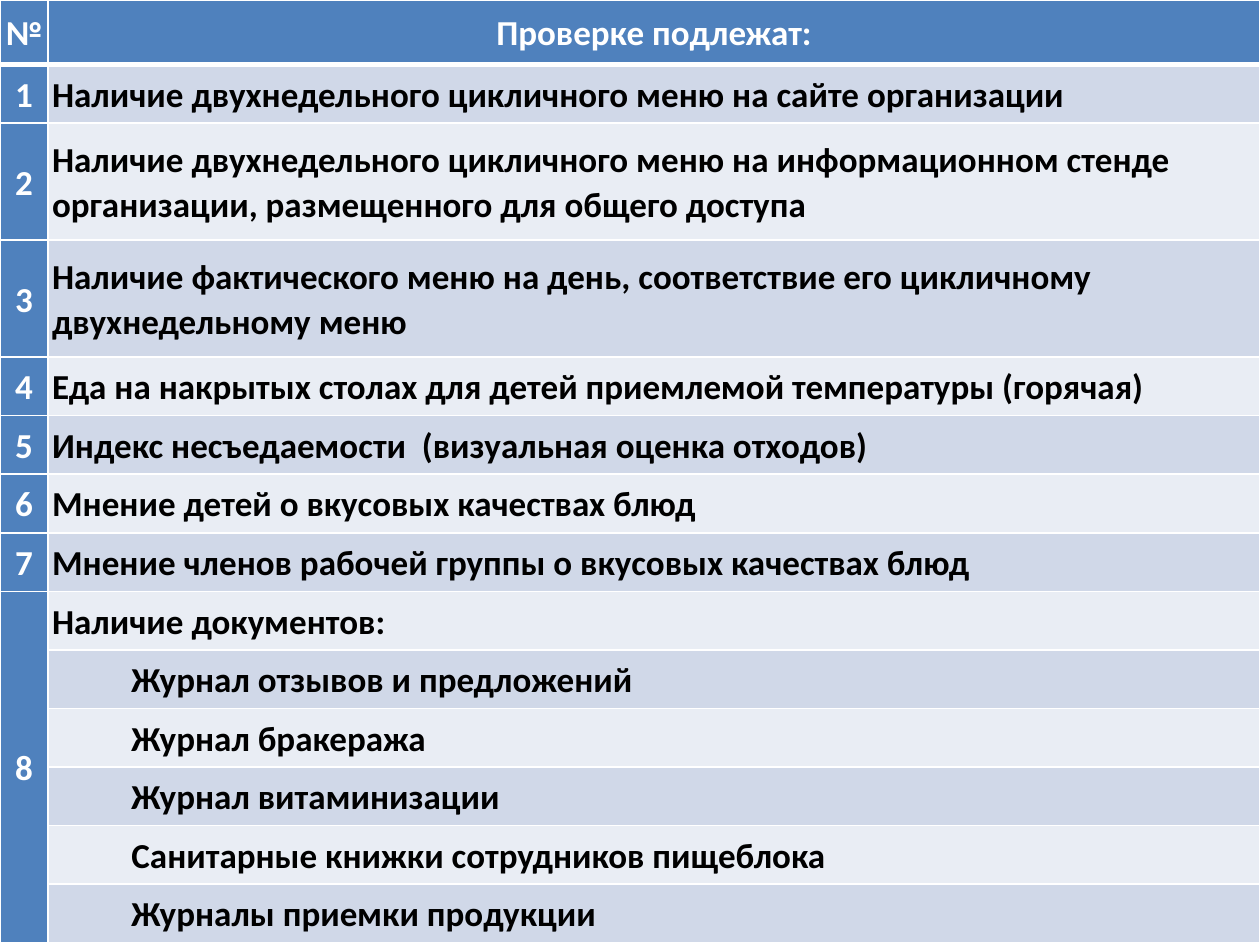
import pptx
import pptx.dml.color
import pptx.enum.text
import pptx.oxml
import pptx.oxml.ns
import pptx.util
from dataclasses import dataclass

Cm = pptx.util.Cm
Pt = pptx.util.Pt
RGB = pptx.dml.color.RGBColor.from_string
ALIGN = pptx.enum.text.PP_ALIGN


@dataclass(frozen=True)
class Theme:
    font: str = "Calibri"
    size: int = 20
    spacing: float = 1.07
    accent: str = "4F81BD"
    bands: tuple = ("D0D8E8", "E9EDF4")
    light: str = "FFFFFF"
    dark: str = "000000"
    thin: int = 1
    thick: int = 3


THEME = Theme()
WIDTH, HEIGHT = 25.4, 19.05
NUMBER_WIDTH = 0.97
HEADER_HEIGHT, LINE_HEIGHT = 1.3, 1.18
INSET, INDENT = 0.08, 1.6

HEADER = ("№", "Проверке подлежат:")
CHECKS = [
    ("Наличие двухнедельного цикличного меню на сайте организации", 1),
    ("Наличие двухнедельного цикличного меню на информационном стенде "
     "организации, размещенного для общего доступа", 2),
    ("Наличие фактического меню на день, соответствие его цикличному "
     "двухнедельному меню", 2),
    ("Еда на накрытых столах для детей приемлемой температуры (горячая)", 1),
    ("Индекс несъедаемости  (визуальная оценка отходов)", 1),
    ("Мнение детей о вкусовых качествах блюд", 1),
    ("Мнение членов рабочей группы о вкусовых качествах блюд", 1),
    ("Наличие документов:", 1),
]
DOCUMENTS = [
    "Журнал отзывов и предложений",
    "Журнал бракеража",
    "Журнал витаминизации",
    "Санитарные книжки сотрудников пищеблока",
    "Журналы приемки продукции",
]


def set_borders(cell, top, bottom):
    tc_pr = cell._tc.get_or_add_tcPr()
    widths = {"L": THEME.thin, "R": THEME.thin, "T": top, "B": bottom}
    for side, width in widths.items():
        tc_pr.append(pptx.oxml.parse_xml(
            f'<a:ln{side} {pptx.oxml.ns.nsdecls("a")} w="{Pt(width)}">'
            f'<a:solidFill><a:srgbClr val="{THEME.light}"/></a:solidFill>'
            f'</a:ln{side}>'))


def style_cell(cell, fill, top=THEME.thin, bottom=THEME.thin):
    set_borders(cell, top, bottom)
    cell.fill.solid()
    cell.fill.fore_color.rgb = RGB(fill)
    cell.vertical_anchor = pptx.enum.text.MSO_ANCHOR.MIDDLE
    cell.margin_left = cell.margin_right = Cm(INSET)
    cell.margin_top = cell.margin_bottom = 0


def write_cell(cell, text, color, align=ALIGN.LEFT, indent=0):
    p = cell.text_frame.paragraphs[0]
    p.alignment = align
    p.line_spacing = THEME.spacing
    if indent:
        p._p.get_or_add_pPr().set("marL", str(Cm(indent)))
    r = p.add_run()
    r.text = text
    r.font.name = THEME.font
    r.font.size = Pt(THEME.size)
    r.font.bold = True
    r.font.color.rgb = RGB(color)


def add_check_table(s):
    rows = [(text, lines, 0) for text, lines in CHECKS]
    rows += [(text, 1, INDENT) for text in DOCUMENTS]
    frame = s.shapes.add_table(len(rows) + 1, 2, 0, 0, Cm(WIDTH), Cm(HEIGHT))
    table = frame.table
    table.first_row = table.horz_banding = False
    table.columns[0].width = Cm(NUMBER_WIDTH)
    table.columns[1].width = Cm(WIDTH - NUMBER_WIDTH)

    table.rows[0].height = Cm(HEADER_HEIGHT)
    for col, text in enumerate(HEADER):
        cell = table.cell(0, col)
        style_cell(cell, THEME.accent, bottom=THEME.thick)
        write_cell(cell, text, THEME.light, ALIGN.CENTER)

    for row, (text, lines, indent) in enumerate(rows, 1):
        table.rows[row].height = Cm(LINE_HEIGHT * lines)
        top = THEME.thick if row == 1 else THEME.thin
        number, check = table.cell(row, 0), table.cell(row, 1)
        style_cell(number, THEME.accent, top)
        style_cell(check, THEME.bands[(row - 1) % 2], top)
        write_cell(check, text, THEME.dark, indent=indent)
        if row <= len(CHECKS):
            write_cell(number, str(row), THEME.light, ALIGN.CENTER)

    table.cell(len(CHECKS), 0).merge(table.cell(len(rows), 0))


def main():
    prs = pptx.Presentation()
    prs.slide_width, prs.slide_height = Cm(WIDTH), Cm(HEIGHT)
    s = prs.slides.add_slide(prs.slide_layouts[6])
    add_check_table(s)
    prs.save("out.pptx")


if __name__ == "__main__":
    main()
